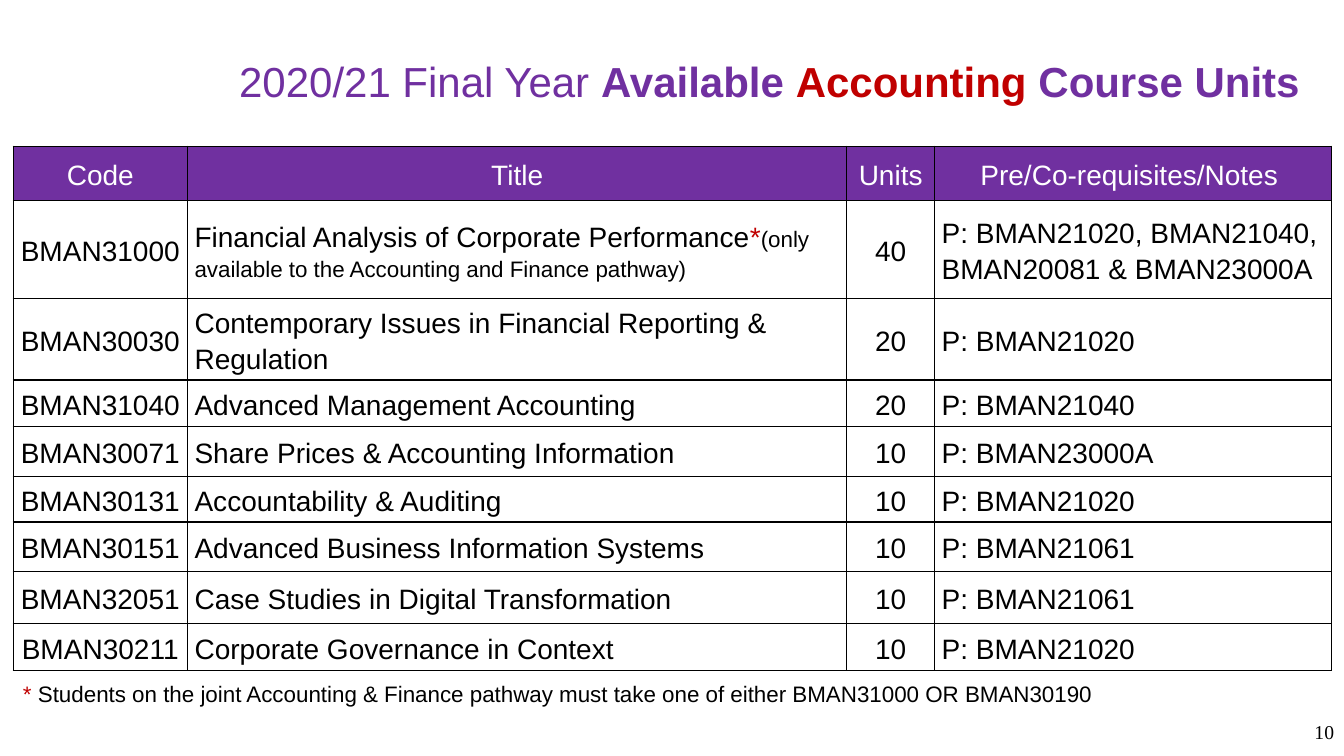
import pptx
import pptx.dml.color
import pptx.enum.text
import pptx.oxml
import pptx.oxml.ns
import pptx.util

PX = 9144
PURPLE = pptx.dml.color.RGBColor(0x70, 0x30, 0xA0)
RED = pptx.dml.color.RGBColor(0xC0, 0x00, 0x00)
BLACK = pptx.dml.color.RGBColor(0x00, 0x00, 0x00)
WHITE = pptx.dml.color.RGBColor(0xFF, 0xFF, 0xFF)
ALIGN = pptx.enum.text.PP_ALIGN
MIDDLE = pptx.enum.text.MSO_ANCHOR.MIDDLE

HEADINGS = ["Code", "Title", "Units", "Pre/Co-requisites/Notes "]
COURSES = [
    ("BMAN31000", "Financial Analysis of Corporate Performance", "40",
     "P: BMAN21020, BMAN21040, BMAN20081 & BMAN23000A"),
    ("BMAN30030", "Contemporary Issues in Financial Reporting & Regulation", "20", "P: BMAN21020"),
    ("BMAN31040", "Advanced Management Accounting", "20", "P: BMAN21040"),
    ("BMAN30071", "Share Prices & Accounting Information", "10", "P: BMAN23000A"),
    ("BMAN30131", "Accountability & Auditing", "10", "P: BMAN21020"),
    ("BMAN30151", "Advanced Business Information Systems", "10", "P: BMAN21061"),
    ("BMAN32051", "Case Studies in Digital Transformation", "10", "P: BMAN21061"),
    ("BMAN30211", "Corporate Governance in Context", "10", "P: BMAN21020"),
]
PATHWAY_NOTE = [("*", 20, RED), ("(only available to the Accounting and Finance pathway)", 16, BLACK)]
COLUMN_WIDTHS = [173, 654, 87, 394]
ROW_HEIGHTS = [54, 97, 81, 46, 50, 45, 49, 52, 46]


def px(length):
    return pptx.util.Emu(length * PX)


def add_run(paragraph, text, size, color, bold=False, font="Arial"):
    run = paragraph.add_run()
    run.text = text
    run.font.size = pptx.util.Pt(size)
    run.font.name = font
    run.font.bold = bold
    run.font.color.rgb = color


def add_text(slide, left, top, width, height, align, anchor, runs, spacing=None):
    frame = slide.shapes.add_textbox(px(left), px(top), px(width), px(height)).text_frame
    frame.word_wrap = True
    frame.vertical_anchor = anchor
    paragraph = frame.paragraphs[0]
    paragraph.alignment = align
    paragraph.line_spacing = spacing
    for run in runs:
        add_run(paragraph, *run)


def add_borders(cell):
    properties = cell._tc.get_or_add_tcPr()
    for side in ("lnL", "lnR", "lnT", "lnB"):
        properties.append(pptx.oxml.parse_xml(
            f'<a:{side} {pptx.oxml.ns.nsdecls("a")} w="12700"><a:solidFill>'
            f'<a:srgbClr val="{BLACK}"/></a:solidFill></a:{side}>'))


def fill_cell(cell, runs, align, background=None):
    add_borders(cell)
    if background is None:
        cell.fill.background()
    else:
        cell.fill.solid()
        cell.fill.fore_color.rgb = background
    cell.vertical_anchor = MIDDLE
    cell.margin_left = cell.margin_right = px(7)
    cell.margin_top = cell.margin_bottom = 0
    paragraph = cell.text_frame.paragraphs[0]
    paragraph.alignment = align
    paragraph.line_spacing = 1.15
    for run in runs:
        add_run(paragraph, *run)


def add_course_table(slide):
    courses = slide.shapes.add_table(
        len(ROW_HEIGHTS), len(COLUMN_WIDTHS), px(13), px(145),
        px(sum(COLUMN_WIDTHS)), px(sum(ROW_HEIGHTS))).table
    courses.first_row = False
    courses.horz_banding = False
    for column, width in zip(courses.columns, COLUMN_WIDTHS):
        column.width = px(width)
    for row, height in zip(courses.rows, ROW_HEIGHTS):
        row.height = px(height)
    for c, heading in enumerate(HEADINGS):
        fill_cell(courses.cell(0, c), [(heading, 20, WHITE)], ALIGN.CENTER, PURPLE)
    for r, course in enumerate(COURSES, 1):
        for c, text in enumerate(course):
            runs = [(text, 20, BLACK)]
            if (r, c) == (1, 1):
                runs += PATHWAY_NOTE
            fill_cell(courses.cell(r, c), runs, ALIGN.LEFT if c % 2 else ALIGN.CENTER)


def main():
    deck = pptx.Presentation()
    deck.slide_width, deck.slide_height = px(1333), px(750)
    slide = deck.slides.add_slide(deck.slide_layouts[6])
    add_text(slide, 1125, 701, 208, 50, ALIGN.RIGHT, MIDDLE,
             [("10", 14, BLACK, False, "Times New Roman")])
    add_text(slide, 210, 30, 1118, 101, ALIGN.CENTER, MIDDLE, [
        ("2020/21 Final Year ", 30, PURPLE),
        ("Available ", 30, PURPLE, True),
        ("Accounting", 30, RED, True),
        (" Course Units ", 30, PURPLE, True),
    ])
    add_course_table(slide)
    add_text(slide, 13, 666, 1236, 39, ALIGN.LEFT, pptx.enum.text.MSO_ANCHOR.TOP, [
        ("* ", 16, RED),
        ("Students on the joint Accounting & Finance pathway must take one of either "
         "BMAN31000 OR BMAN30190", 16, BLACK),
    ], 1.15)
    deck.save("out.pptx")


if __name__ == "__main__":
    main()
